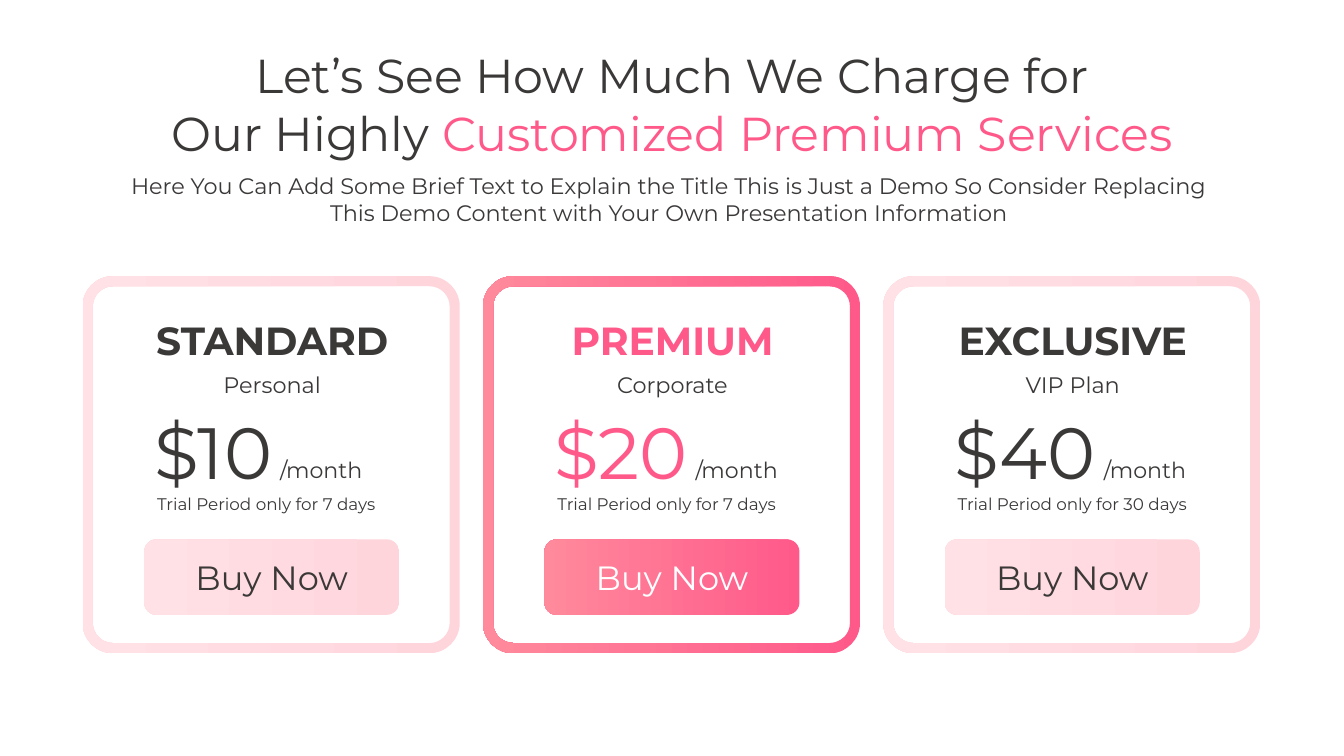
import lxml.etree
import pptx
import pptx.dml.color
import pptx.enum.shapes
import pptx.enum.text
import pptx.oxml.ns
import pptx.util

Inches = pptx.util.Inches
ALIGN = pptx.enum.text.PP_ALIGN
ANCHOR = pptx.enum.text.MSO_ANCHOR

DARK = "3B3838"
WHITE = "FFFFFF"
PINK = ("FF598A", "FF8A9C")
PALE = ("FFD5DC", "FFE1E6")

CARD_SIZE = 3.74
CARD_TOP = 2.74
ROW_LEFT = 0.82
ROW_WIDTH = 11.68
CONTENT_INSET = 0.61
BUTTON_WIDTH = 2.53

PLANS = [
    {"name": "STANDARD", "audience": "Personal", "price": "$10", "days": 7,
     "month_left": 1.86, "accent": DARK, "shade": PALE, "button_text": DARK},
    {"name": "PREMIUM", "audience": "Corporate", "price": "$20", "days": 7,
     "month_left": 2.01, "accent": PINK, "shade": PINK, "button_text": WHITE},
    {"name": "EXCLUSIVE", "audience": "VIP Plan", "price": "$40", "days": 30,
     "month_left": 2.09, "accent": DARK, "shade": PALE, "button_text": DARK},
]


def rgb(color):
    return pptx.dml.color.RGBColor.from_string(color)


def paint(fill, color):
    if isinstance(color, str):
        fill.solid()
        fill.fore_color.rgb = rgb(color)
        return
    fill.gradient()
    fill.gradient_angle = 180
    for stop, stop_color in zip(fill.gradient_stops, color):
        stop.color.rgb = rgb(stop_color)


def set_attributes(target, values):
    for name, value in values.items():
        setattr(target, name, value)


def write(text_frame, lines, size, align=ALIGN.CENTER, anchor=ANCHOR.TOP, bold=False):
    set_attributes(text_frame, {
        "word_wrap": True, "vertical_anchor": anchor,
        "auto_size": pptx.enum.text.MSO_AUTO_SIZE.NONE,
        "margin_left": Inches(0.1), "margin_right": Inches(0.1),
        "margin_top": Inches(0.05), "margin_bottom": Inches(0.05),
    })
    for index, line in enumerate(lines):
        paragraph = text_frame.add_paragraph() if index else text_frame.paragraphs[0]
        set_attributes(paragraph, {"alignment": align, "space_before": 0, "line_spacing": 1.0})
        for text, color in line:
            run = paragraph.add_run()
            run.text = text
            set_attributes(run.font, {"name": "Montserrat", "size": pptx.util.Pt(size), "bold": bold})
            paint(run.font.fill, color)


def place(shape, left, top, width, height):
    set_attributes(shape, {"left": Inches(left), "top": Inches(top),
                           "width": Inches(width), "height": Inches(height)})


def add_label(slide, box, text, size, color=DARK, **options):
    label = slide.shapes.add_textbox(*map(Inches, box))
    write(label.text_frame, [[(text, color)]], size, **options)


def decorate(shape, shade):
    paint(shape.fill, shade)
    shape.line.fill.background()
    shape.shadow.inherit = False


def rounded_outline(left, top, size, radius):
    handle = radius * 0.45
    right, bottom = left + size, top + size
    corners = [(left, bottom, 1, -1), (left, top, 1, 1),
               (right, top, -1, 1), (right, bottom, -1, -1)]
    points = []
    for index, (x, y, inward_x, inward_y) in enumerate(corners):
        along_x = [(x + inward_x * radius, y), (x + inward_x * handle, y)]
        along_y = [(x, y + inward_y * handle), (x, y + inward_y * radius)]
        corner = along_x + along_y
        points += corner[::-1] if index % 2 else corner
    return [(Inches(x), Inches(y)) for x, y in points]


def curve_corners(shape):
    qn = pptx.oxml.ns.qn
    lines = list(shape.element.iter(qn("a:lnTo")))
    for start in range(0, len(lines), 4):
        first, *others = lines[start + 1:start + 4]
        curve = lxml.etree.Element(qn("a:cubicBezTo"))
        first.addprevious(curve)
        for line in (first, *others):
            curve.append(line[0])
            line.getparent().remove(line)


def add_frame(slide, left, top, size, shade):
    border = 0.1
    outer = rounded_outline(left, top, size, 0.3)
    inner = rounded_outline(left + border, top + border, size - 2 * border, 0.2)[::-1]
    builder = slide.shapes.build_freeform(*outer[-1])
    builder.add_line_segments(outer, close=True)
    builder.move_to(*inner[-1])
    builder.add_line_segments(inner, close=True)
    frame = builder.convert_to_shape()
    curve_corners(frame)
    decorate(frame, shade)


def add_button(slide, left, top, width, height, plan):
    button = slide.shapes.add_shape(pptx.enum.shapes.MSO_SHAPE.ROUNDED_RECTANGLE,
                                    *map(Inches, (left, top, width, height)))
    decorate(button, plan["shade"])
    write(button.text_frame, [[("Buy Now", plan["button_text"])]], 24, anchor=ANCHOR.MIDDLE)


def add_plan_card(slide, left, top, size, plan):
    content_left = left + CONTENT_INSET
    label_left = left + 0.01
    add_label(slide, (left + plan["month_left"], top + 1.74, 1.08, 0.37), "/month", 15.8,
              align=ALIGN.LEFT)
    add_label(slide, (content_left, top + 1.25, 1.7, 0.97), plan["price"], 51.8,
              plan["accent"], align=ALIGN.LEFT)
    add_frame(slide, left, top, size, plan["shade"])
    add_label(slide, (label_left, top + 0.35, size, 0.57), plan["name"], 28,
              plan["accent"], bold=True)
    add_label(slide, (label_left, top + 0.89, size, 0.37), plan["audience"], 16)
    add_label(slide, (content_left + 0.03, top + 2.11, 2.6, 0.3),
              f"Trial Period only for {plan['days']} days", 12, align=ALIGN.LEFT)
    add_button(slide, content_left, top + 2.61, BUTTON_WIDTH, 0.75, plan)


def add_heading(slide, left, top, width):
    title, subtitle = slide.placeholders
    place(title, left + 0.03, top, width, 1.25)
    write(title.text_frame, [
        [("Let’s See How Much We Charge for", DARK)],
        [("Our Highly ", DARK), ("Customized Premium Services", PINK)],
    ], 34)
    place(subtitle, left, top + 1.25, width, 0.64)
    write(subtitle.text_frame, [
        [("Here You Can Add Some Brief Text to Explain the Title "
          "This is Just a Demo So Consider Replacing", DARK)],
        [("This Demo Content with Your Own Presentation Information", DARK)],
    ], 16)


def add_plan_row(slide, left, top, width):
    pitch = (width - CARD_SIZE) / (len(PLANS) - 1)
    for index, plan in enumerate(PLANS):
        add_plan_card(slide, left + index * pitch, top, CARD_SIZE, plan)


def main():
    presentation = pptx.Presentation()
    set_attributes(presentation, {"slide_width": Inches(13.33), "slide_height": Inches(7.5)})
    slide = presentation.slides.add_slide(presentation.slide_layouts[0])
    paint(slide.background.fill, WHITE)
    add_heading(slide, 1.06, 0.41, 11.15)
    add_plan_row(slide, ROW_LEFT, CARD_TOP, ROW_WIDTH)
    presentation.save("out.pptx")


if __name__ == "__main__":
    main()
